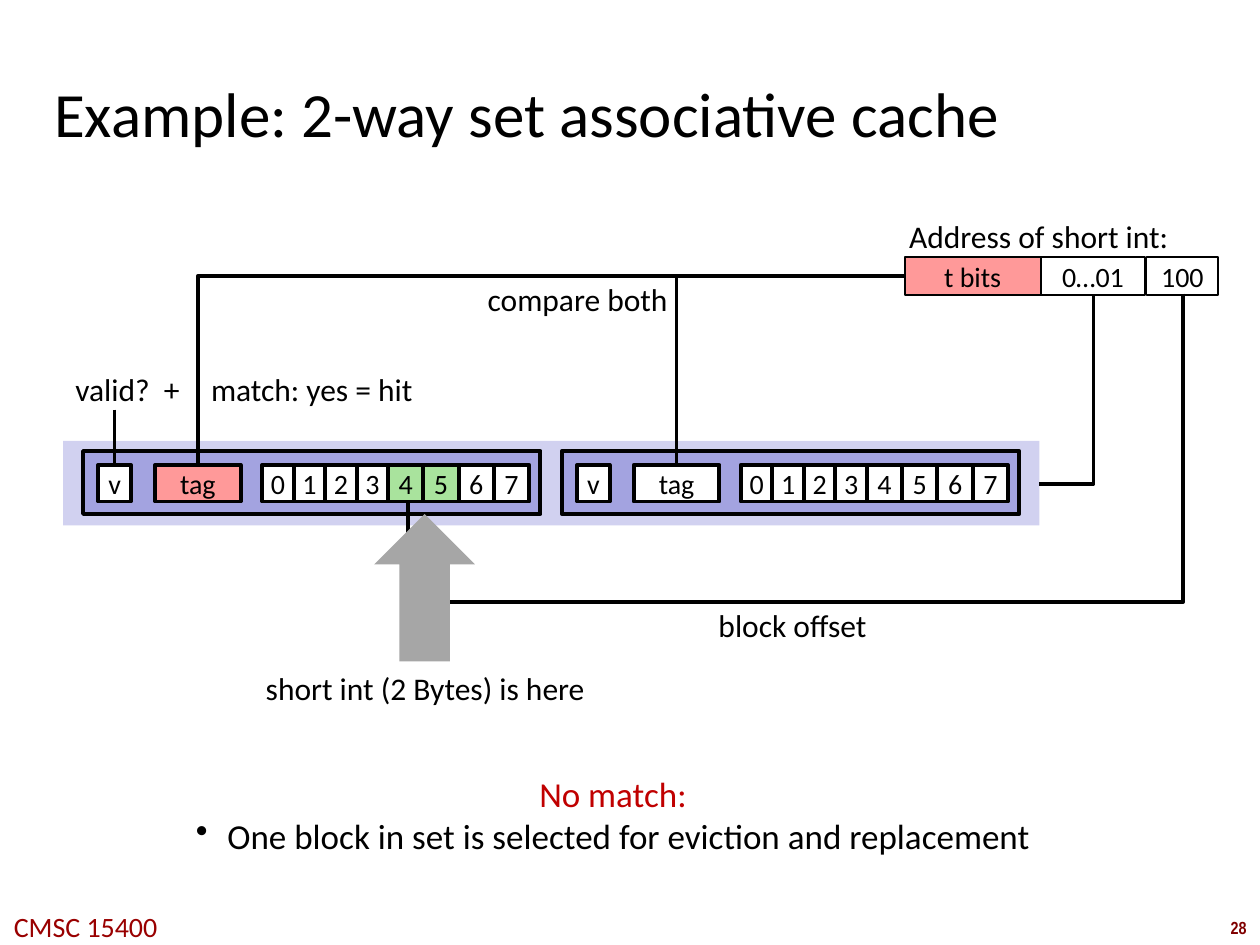
from dataclasses import dataclass

from lxml.etree import SubElement
from pptx import Presentation
from pptx.dml.color import RGBColor
from pptx.enum.shapes import MSO_CONNECTOR, MSO_SHAPE
from pptx.enum.text import MSO_ANCHOR, PP_ALIGN
from pptx.oxml.ns import qn
from pptx.util import Inches, Pt


@dataclass(frozen=True)
class Theme:
    font: str = "Calibri"
    number_font: str = "Arial Narrow"
    black: str = "000000"
    white: str = "FFFFFF"
    tag: str = "FF9999"
    hit: str = "A9E39D"
    cache_set: str = "D1D1F0"
    way: str = "A3A3E0"
    pointer: str = "A6A6A6"
    alert: str = "C00000"
    footer: str = "990000"
    number: str = "800000"
    title_size: int = 36
    note_size: int = 20
    label_size: int = 18
    cell_size: int = 16
    number_size: int = 10


theme = Theme()
prs = Presentation()
prs.slide_width, prs.slide_height = Inches(10), Inches(7.5)
slide = prs.slides.add_slide(prs.slide_layouts[6])


def add_block(box, fill, line_width=0, text="", preset=MSO_SHAPE.RECTANGLE):
    """Add a filled shape, outlined in black when line_width is given."""
    block = slide.shapes.add_shape(preset, *map(Inches, box))
    block.shadow.inherit = False
    block.fill.solid()
    block.fill.fore_color.rgb = RGBColor.from_string(fill)
    if line_width:
        block.line.color.rgb = RGBColor.from_string(theme.black)
        block.line.width = Pt(line_width)
    else:
        block.line.fill.background()
    if text:
        frame = block.text_frame
        frame.word_wrap = False
        frame.vertical_anchor = MSO_ANCHOR.MIDDLE
        paragraph = frame.paragraphs[0]
        paragraph.text = text
        paragraph.alignment = PP_ALIGN.CENTER
        paragraph.font.name = theme.font
        paragraph.font.size = Pt(theme.cell_size)
        paragraph.font.color.rgb = RGBColor.from_string(theme.black)
    return block


def add_label(box, lines, size, align=PP_ALIGN.CENTER, font=theme.font):
    """Add an unwrapped text box; lines holds (text, colour) pairs."""
    frame = slide.shapes.add_textbox(*map(Inches, box)).text_frame
    frame.word_wrap = False
    for i, (text, color) in enumerate(lines):
        paragraph = frame.add_paragraph() if i else frame.paragraphs[0]
        paragraph.text = text
        paragraph.alignment = align
        paragraph.font.name = font
        paragraph.font.size = Pt(size)
        paragraph.font.color.rgb = RGBColor.from_string(color)
    return frame


# Title and footer
title = add_label((0.39, 0.48, 8.71, 0.83),
                  [("Example: 2-way set associative cache", theme.black)],
                  theme.title_size, PP_ALIGN.LEFT)
title.vertical_anchor = MSO_ANCHOR.MIDDLE
title.margin_left = title.margin_right = Inches(0.04)
title.margin_top = title.margin_bottom = Inches(0.04)
page_number = add_label((9.66, 7.23, 0.34, 0.27), [("28", theme.number)],
                        theme.number_size, font=theme.number_font)
page_number.paragraphs[0].font.bold = True
add_label((-0.03, 7.17, 1.42, 0.37), [("CMSC 15400", theme.footer)],
          theme.cell_size)

# Address fields
for left, width, fill, bits in [(7.18, 1.08, theme.tag, "t bits"),
                                (8.26, 0.83, theme.white, "0…01"),
                                (9.1, 0.57, theme.white, "100")]:
    add_block((left, 2.04, width, 0.3), fill, 1, bits)

# The set and its two ways; the first way holds the matching block
add_block((0.5, 3.5, 7.75, 0.67), theme.cache_set)
valid_bits = []
for way_left, matches in [(0.66, True), (4.46, False)]:
    add_block((way_left, 3.58, 3.63, 0.5), theme.way, 2.25)
    valid_bits.append(add_block((way_left + 0.12, 3.69, 0.26, 0.29),
                                theme.white, 2.25, "v"))
    add_block((way_left + 0.57, 3.69, 0.68, 0.29),
              theme.tag if matches else theme.white, 2.25, "tag")
    byte_left = way_left + 1.42
    for byte in range(8):
        pitch = 0.25 if byte < 4 else 0.28
        fill = theme.hit if matches and byte in (4, 5) else theme.white
        add_block((byte_left, 3.69, pitch, 0.29), fill, 2.25, str(byte))
        byte_left += pitch

# Wires: set index, tag compare for both ways, valid bit, block offset
wires = []
for ends in [(8.25, 3.84, 8.68, 2.33),
             (7.18, 2.19, 5.37, 3.69),
             (7.18, 2.19, 1.57, 3.69)]:
    wire = slide.shapes.add_connector(MSO_CONNECTOR.ELBOW, *map(Inches, ends))
    wire._element.spPr.find(qn("a:prstGeom")).set("prst", "bentConnector2")
    wires.append(wire)

valid_wire = slide.shapes.add_connector(
    MSO_CONNECTOR.STRAIGHT, Inches(0.91), Inches(3.25), Inches(0.91), Inches(3.69))
valid_wire.end_connect(valid_bits[0], 0)

offset_wire = slide.shapes.add_connector(
    MSO_CONNECTOR.ELBOW, Inches(5.49), Inches(0.08), Inches(7.14), Inches(6.23))
offset_props = offset_wire._element.spPr
offset_props.find(qn("a:xfrm")).set("rot", str(90 * 60000))
adjustments = offset_props.find(qn("a:prstGeom")).find(qn("a:avLst"))
SubElement(adjustments, qn("a:gd"), name="adj1", fmla="val 148400")

for wire in wires + [valid_wire, offset_wire]:
    wire.line.color.rgb = RGBColor.from_string(theme.black)
    wire.line.width = Pt(2)
    SubElement(wire._element.spPr, qn("a:effectLst"))

# Pointer to the requested bytes
pointer = add_block((2.97, 4.08, 0.8, 1.17), theme.pointer,
                    preset=MSO_SHAPE.UP_ARROW)

# Annotations
for left, top, width, text, align in [
        (7.08, 1.67, 2.33, "Address of short int:", PP_ALIGN.CENTER),
        (3.75, 2.17, 1.67, "compare both", PP_ALIGN.CENTER),
        (0.5, 2.89, 1.12, "valid?  +", PP_ALIGN.LEFT),
        (1.55, 2.89, 1.85, "match: yes = hit", PP_ALIGN.CENTER),
        (5.58, 4.76, 1.42, "block offset", PP_ALIGN.CENTER),
        (1.97, 5.26, 2.81, "short int (2 Bytes) is here", PP_ALIGN.CENTER)]:
    add_label((left, top, width, 0.4), [(text, theme.black)],
              theme.label_size, align)

# Outcome when neither tag matches
outcome = add_label(
    (1.42, 6.08, 6.89, 1.11),
    [("No match:", theme.alert),
     ("One block in set is selected for eviction and replacement", theme.black)],
    theme.note_size)
bullet_props = outcome.paragraphs[1]._p.get_or_add_pPr()
bullet_props.set("marL", str(Inches(0.25)))
bullet_props.set("indent", str(Inches(-0.25)))
bullet = bullet_props.makeelement(qn("a:buChar"), {"char": "•"})
bullet_props.insert(0, bullet)

prs.save("out.pptx")
